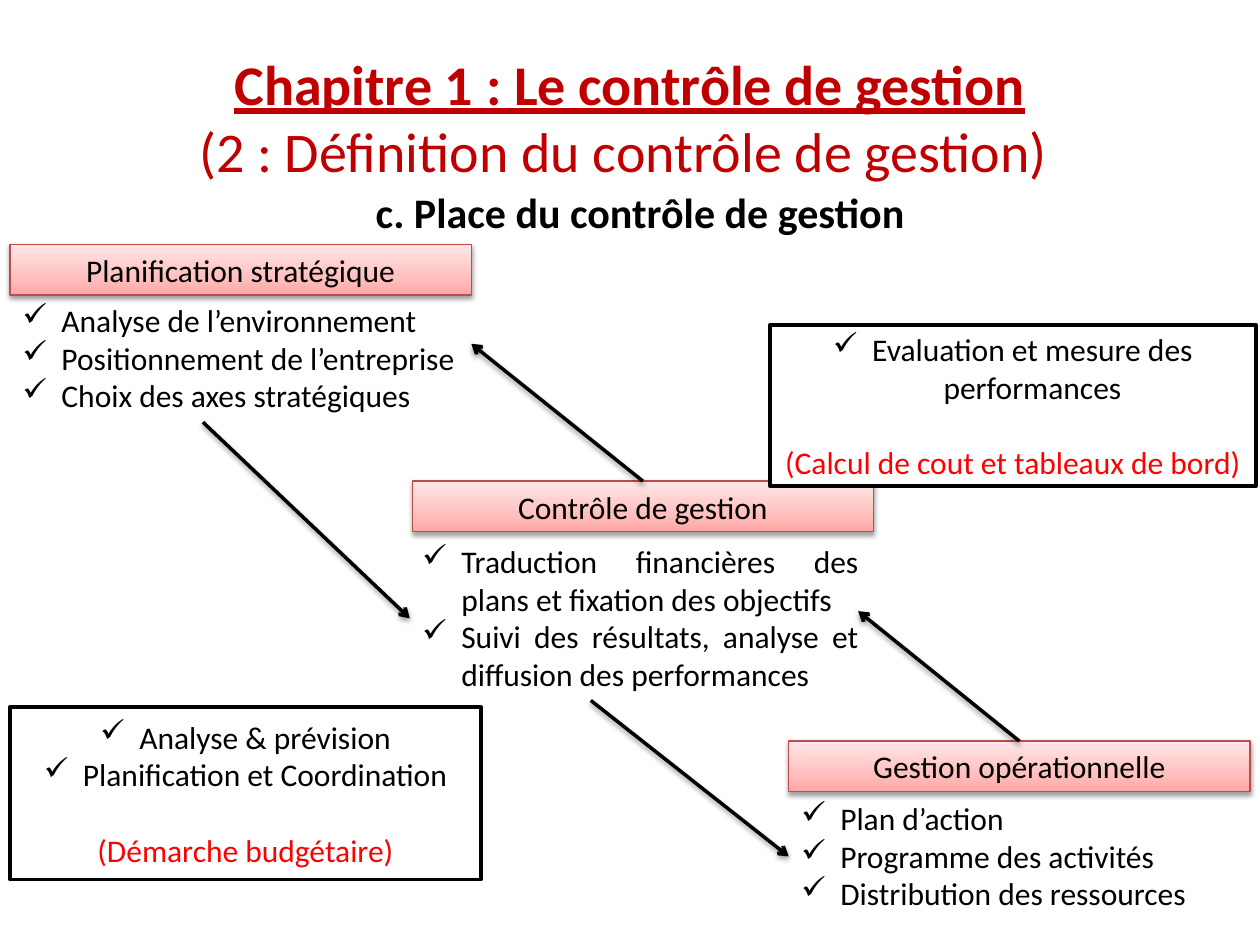
from dataclasses import dataclass

from lxml import etree
from pptx import Presentation
from pptx import util as u
from pptx.dml.color import RGBColor
from pptx.enum import shapes, text
from pptx.oxml import ns


@dataclass(frozen=True)
class Theme:
    font: str = "Calibri"
    black: str = "000000"
    white: str = "FFFFFF"
    title: str = "C00000"
    accent: str = "FF0000"
    heading_line: str = "BF4C48"
    heading_stops: tuple = ((0, "FFA6A5"), (35, "FFC0BF"), (100, "FFE7E7"))
    title_size: int = 32
    subtitle_size: int = 24
    body_size: int = 18
    thin: float = 0.75
    thick: float = 2


@dataclass(frozen=True)
class Frame:
    left: float
    top: float
    width: float
    height: float

    def lengths(self) -> list:
        return [u.Cm(value) for value in (self.left, self.top, self.width, self.height)]


@dataclass(frozen=True)
class Stage:
    heading: str
    heading_frame: Frame
    items: tuple
    items_frame: Frame
    align: text.PP_ALIGN = text.PP_ALIGN.LEFT


@dataclass(frozen=True)
class Note:
    items: tuple
    remark: str
    frame: Frame


THEME = Theme()
CENTER = text.PP_ALIGN.CENTER
TOP, LEFT = 0, 1
INDENT = 0.79
WIDTH = 9.3
HEADING_HEIGHT = 1.02

STAGES = (
    Stage("Planification stratégique", Frame(0.2, 4.93, WIDTH, HEADING_HEIGHT),
          ("Analyse de l’environnement", "Positionnement de l’entreprise",
           "Choix des axes stratégiques"),
          Frame(0.2, 5.94, WIDTH, 2.57)),
    Stage("Contrôle de gestion", Frame(8.31, 9.7, WIDTH, HEADING_HEIGHT),
          ("Traduction financières des plans et fixation des objectifs",
           "Suivi des résultats, analyse et diffusion des performances"),
          Frame(8.26, 10.8, WIDTH, 3.33), text.PP_ALIGN.JUSTIFY),
    Stage("Gestion opérationnelle", Frame(15.9, 14.94, WIDTH, HEADING_HEIGHT),
          ("Plan d’action", "Programme des activités", "Distribution des ressources"),
          Frame(15.9, 15.98, WIDTH, 2.57)),
)
NOTES = (
    Note(("Analyse & prévision", "Planification et Coordination"),
         "(Démarche budgétaire)", Frame(0.2, 14.25, 9.5, 3.48)),
    Note(("Evaluation et mesure des performances",),
         "(Calcul de cout et tableaux de bord)", Frame(15.52, 6.55, 9.8, 3.25)),
)


def color(value: str) -> RGBColor:
    return RGBColor.from_string(value)


def add_child(parent, tag: str, **attributes):
    child = etree.SubElement(parent, ns.qn(tag))
    for name, value in attributes.items():
        child.set(name, str(value))
    return child


def write(frame, words: str, *, size: float = THEME.body_size, ink: str = THEME.black,
          bold: bool = False, underline: bool = False, align=CENTER,
          bullet: bool = False, before: float = 0) -> None:
    para = frame.paragraphs[0] if not frame.text else frame.add_paragraph()
    para.alignment = align
    para.space_before = u.Pt(before)
    span = para.add_run()
    span.text = words
    font = span.font
    font.name, font.size, font.bold, font.underline = THEME.font, u.Pt(size), bold, underline
    font.color.rgb = color(ink)
    if bullet:
        properties = para._p.get_or_add_pPr()
        properties.set("marL", str(u.Cm(INDENT)))
        properties.set("indent", str(-u.Cm(INDENT)))
        add_child(properties, "a:buChar", char="✓")


def add_text(page, place: Frame, anchor=text.MSO_ANCHOR.TOP):
    frame = page.shapes.add_textbox(*place.lengths()).text_frame
    frame.word_wrap = True
    frame.vertical_anchor = anchor
    return frame


def add_box(page, place: Frame, line: str, weight: float):
    box = page.shapes.add_shape(shapes.MSO_SHAPE.RECTANGLE, *place.lengths())
    box.shadow.inherit = False
    box.line.color.rgb = color(line)
    box.line.width = u.Pt(weight)
    box.text_frame.word_wrap = True
    box.text_frame.vertical_anchor = text.MSO_ANCHOR.MIDDLE
    return box


def add_shadow(effects) -> None:
    shadow = add_child(effects, "a:outerShdw", blurRad=u.Pt(3.1), dist=u.Pt(1.6),
                       dir=90 * 60000, rotWithShape=0)
    ink = add_child(shadow, "a:srgbClr", val=THEME.black)
    add_child(ink, "a:alpha", val=38000)


def add_heading(page, words: str, place: Frame):
    box = add_box(page, place, THEME.heading_line, THEME.thin)
    box.fill.gradient()
    box.fill.gradient_angle = 90
    stops = box._element.spPr.find(".//" + ns.qn("a:gsLst"))
    for stop in list(stops):
        stops.remove(stop)
    for position, value in THEME.heading_stops:
        add_child(add_child(stops, "a:gs", pos=position * 1000), "a:srgbClr", val=value)
    add_shadow(box._element.spPr.find(ns.qn("a:effectLst")))
    write(box.text_frame, words)
    return box


def add_stage(page, stage: Stage) -> tuple:
    heading = add_heading(page, stage.heading, stage.heading_frame)
    frame = add_text(page, stage.items_frame)
    for item in stage.items:
        write(frame, item, align=stage.align, bullet=True)
    return heading, page.shapes[-1]


def add_note(page, note: Note) -> None:
    box = add_box(page, note.frame, THEME.black, THEME.thick)
    box.fill.solid()
    box.fill.fore_color.rgb = color(THEME.white)
    for item in note.items:
        write(box.text_frame, item, bullet=True)
    write(box.text_frame, note.remark, ink=THEME.accent, before=THEME.body_size * 1.2)


def add_arrow(page, start: tuple, end: tuple):
    points = [u.Cm(value) for value in start + end]
    arrow = page.shapes.add_connector(shapes.MSO_CONNECTOR.STRAIGHT, *points)
    arrow.line.color.rgb = color(THEME.black)
    arrow.line.width = u.Pt(THEME.thick)
    add_child(arrow.line._get_or_add_ln(), "a:tailEnd", type="arrow")
    add_shadow(add_child(arrow._element.spPr, "a:effectLst"))
    return arrow


def main() -> None:
    deck = Presentation()
    deck.slide_width, deck.slide_height = u.Cm(25.4), u.Cm(19.05)
    page = deck.slides.add_slide(deck.slide_layouts[6])

    title = add_text(page, Frame(1.27, 0.76, 22.86, 3.18), text.MSO_ANCHOR.MIDDLE)
    write(title, "Chapitre 1 : Le contrôle de gestion", size=THEME.title_size,
          ink=THEME.title, bold=True, underline=True)
    write(title, "(2 : Définition du contrôle de gestion) ", size=THEME.title_size,
          ink=THEME.title)
    subtitle = add_text(page, Frame(1.5, 3.63, 22.81, 1.27))
    write(subtitle, "c. Place du contrôle de gestion", size=THEME.subtitle_size, bold=True)

    _, control, operations = [add_stage(page, stage) for stage in STAGES]
    for start, (_, items) in (((4.09, 8.51), control), ((11.91, 14.12), operations)):
        add_arrow(page, start, start).end_connect(items, LEFT)
    for (heading, _), end in ((control, (9.5, 6.93)), (operations, (17.3, 12.32))):
        add_arrow(page, end, end).begin_connect(heading, TOP)

    for note in NOTES:
        add_note(page, note)
    deck.save("out.pptx")


if __name__ == "__main__":
    main()
